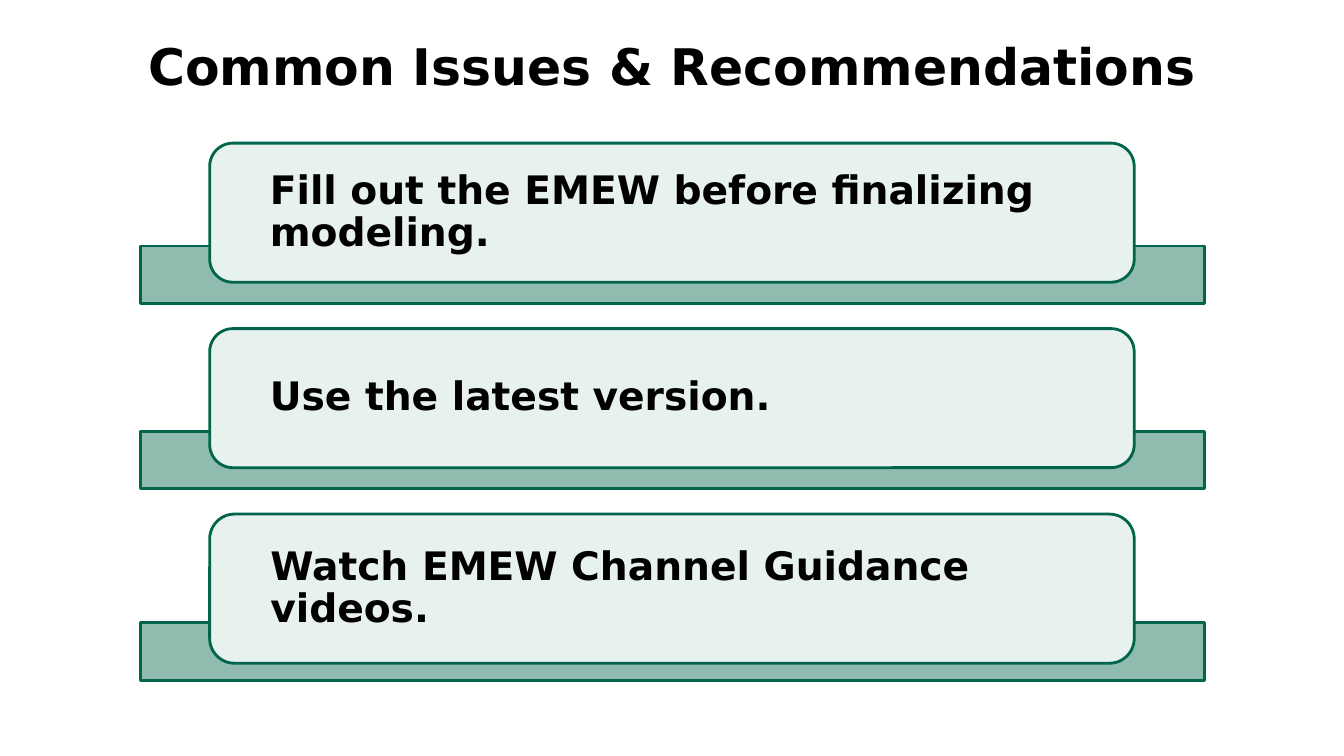
from dataclasses import dataclass

import lxml.etree
import pptx
import pptx.dml.color
import pptx.enum.shapes
import pptx.enum.text
import pptx.oxml.ns
import pptx.util

Inches = pptx.util.Inches
Pt = pptx.util.Pt
Shapes = pptx.enum.shapes.MSO_SHAPE
Align = pptx.enum.text.PP_ALIGN
Anchor = pptx.enum.text.MSO_ANCHOR
Color = pptx.dml.color.RGBColor


@dataclass(frozen=True)
class Theme:
    font: str = "DejaVu Sans"
    title_size: int = 36
    card_size: int = 28
    line_width: int = 2
    ink: Color = Color.from_string("000000")
    bar: Color = Color.from_string("85B5A8")
    bar_opacity: int = 90
    card: Color = Color.from_string("E7F1EE")
    edge: Color = Color.from_string("01654B")


@dataclass(frozen=True)
class Recommendation:
    text: str
    height: float = 1.38
    bar_offset: float = 1.02


THEME = Theme()
RECOMMENDATIONS = [
    Recommendation("Fill out the EMEW before finalizing modeling."),
    Recommendation("Use the latest version."),
    Recommendation("Watch EMEW Channel Guidance videos.", 1.48, 1.08),
]
FIRST_TOP, PITCH = 1.42, 1.84
BAR_LEFT, BAR_WIDTH, BAR_HEIGHT = 1.39, 10.56, 0.57
CARD_LEFT, CARD_WIDTH = 2.08, 9.17


def write(frame, text: str, size: int, align: Align) -> None:
    """Put one bold paragraph, centred vertically, in a text frame."""
    frame.word_wrap = True
    frame.auto_size = pptx.enum.text.MSO_AUTO_SIZE.NONE
    frame.vertical_anchor = Anchor.MIDDLE
    para = frame.paragraphs[0]
    para.alignment = align
    para.line_spacing = 0.9
    span = para.add_run()
    span.text = text
    span.font.name = THEME.font
    span.font.size = Pt(size)
    span.font.bold = True
    span.font.color.rgb = THEME.ink


def add_panel(page, kind: Shapes, left: float, top: float, width: float,
              height: float, fill: Color):
    panel = page.shapes.add_shape(
        kind, Inches(left), Inches(top), Inches(width), Inches(height))
    panel.shadow.inherit = False
    panel.fill.solid()
    panel.fill.fore_color.rgb = fill
    panel.line.color.rgb = THEME.edge
    panel.line.width = Pt(THEME.line_width)
    return panel


def set_opacity(panel, percent: int) -> None:
    color = panel.fill._xPr.find(".//" + pptx.oxml.ns.qn("a:srgbClr"))
    alpha = lxml.etree.SubElement(color, pptx.oxml.ns.qn("a:alpha"))
    alpha.set("val", str(percent * 1000))


def add_title(page, text: str) -> None:
    title = page.shapes.title
    title.left, title.top = Inches(0), Inches(0.23)
    title.width, title.height = Inches(13.33), Inches(0.92)
    write(title.text_frame, text, THEME.title_size, Align.CENTER)


def add_recommendation(page, item: Recommendation, top: float) -> None:
    bar = add_panel(page, Shapes.RECTANGLE, BAR_LEFT, top + item.bar_offset,
                    BAR_WIDTH, BAR_HEIGHT, THEME.bar)
    set_opacity(bar, THEME.bar_opacity)
    card = add_panel(page, Shapes.ROUNDED_RECTANGLE, CARD_LEFT, top,
                     CARD_WIDTH, item.height, THEME.card)
    frame = card.text_frame
    frame.margin_left, frame.margin_right = Inches(0.53), Inches(0.33)
    frame.margin_top = frame.margin_bottom = Inches(0.03)
    write(frame, item.text, THEME.card_size, Align.LEFT)


def main() -> None:
    deck = pptx.Presentation()
    deck.slide_width, deck.slide_height = Inches(13.33), Inches(7.5)
    page = deck.slides.add_slide(deck.slide_layouts.get_by_name("Title Only"))
    add_title(page, "Common Issues & Recommendations")
    for row, item in enumerate(RECOMMENDATIONS):
        add_recommendation(page, item, FIRST_TOP + row * PITCH)
    deck.save("out.pptx")


if __name__ == "__main__":
    main()
